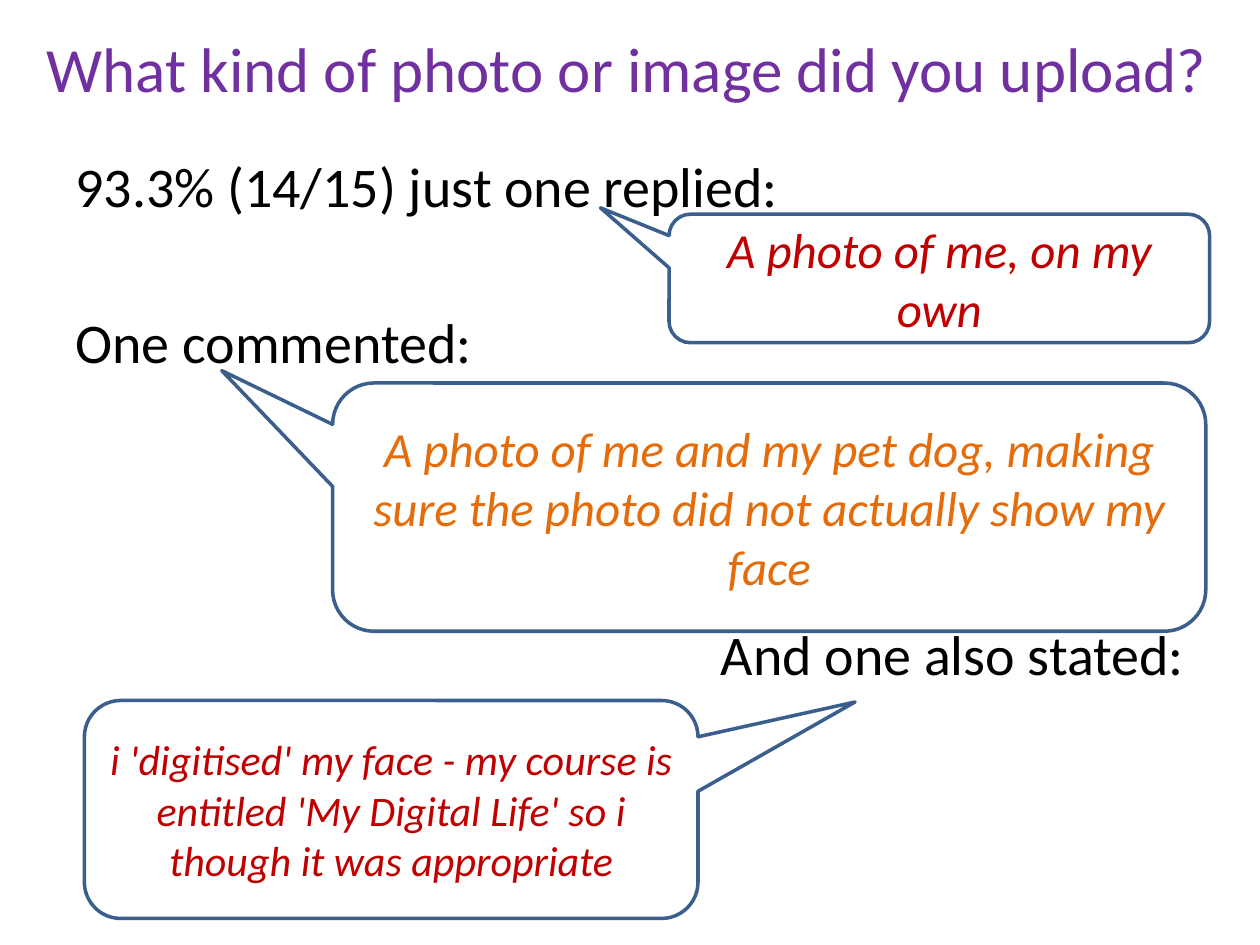
from dataclasses import dataclass

from pptx import Presentation
from pptx.dml.color import RGBColor
from pptx.enum.shapes import MSO_SHAPE
from pptx.enum.text import MSO_ANCHOR, MSO_AUTO_SIZE, PP_ALIGN
from pptx.util import Inches, Pt

CALLOUT = MSO_SHAPE.ROUNDED_RECTANGULAR_CALLOUT
LEFT, CENTER, RIGHT = PP_ALIGN.LEFT, PP_ALIGN.CENTER, PP_ALIGN.RIGHT
TOP, MIDDLE = MSO_ANCHOR.TOP, MSO_ANCHOR.MIDDLE
TITLE_ONLY = 5
WIDTH, HEIGHT = 10, 7.5


@dataclass(frozen=True)
class Theme:
    font: str = "Calibri"
    purple: str = "7030A0"
    black: str = "000000"
    red: str = "C00000"
    orange: str = "E46C0A"
    outline: str = "3A5F8C"
    title: int = 36
    body: int = 32
    quote: int = 28
    small_quote: int = 24
    line: int = 2
    corner: float = 0.167


THEME = Theme()


def box(left, top, width, height):
    """Turn inches into the four lengths of a shape."""
    return [Inches(v) for v in (left, top, width, height)]


def prepare(tf, anchor):
    tf.word_wrap = True
    tf.auto_size = MSO_AUTO_SIZE.NONE
    tf.vertical_anchor = anchor


def write(p, text, size=THEME.body, color=THEME.black, align=LEFT,
          italic=False, before=0):
    """Fill one paragraph with formatted text."""
    p.alignment = align
    p.space_before = Pt(before)
    r = p.add_run()
    r.text = text
    r.font.name = THEME.font
    r.font.size = Pt(size)
    r.font.italic = italic
    r.font.color.rgb = RGBColor.from_string(color)


def add_title(s, text):
    sp = s.shapes.title
    sp.left, sp.top, sp.width, sp.height = box(0.12, 0.03, 9.71, 1.01)
    prepare(sp.text_frame, MIDDLE)
    write(sp.text_frame.paragraphs[0], text, size=THEME.title,
          color=THEME.purple, align=CENTER)


def add_prompts(s, prompts):
    """Prompts share one text box; spacing leaves room for the quotes."""
    tf = s.shapes.add_textbox(*box(0.5, 1.15, 9, 5.55)).text_frame
    prepare(tf, TOP)
    for i, (text, align, before) in enumerate(prompts):
        p = tf.add_paragraph() if i else tf.paragraphs[0]
        write(p, text, align=align, before=before)


def add_callout(s, place, tail, text, size, color):
    """Speech bubble; tail is its tip as shares of the size from the centre."""
    sp = s.shapes.add_shape(CALLOUT, *box(*place))
    for i, value in enumerate((*tail, THEME.corner)):
        sp.adjustments[i] = value
    sp.shadow.inherit = False
    sp.fill.background()
    sp.line.color.rgb = RGBColor.from_string(THEME.outline)
    sp.line.width = Pt(THEME.line)
    prepare(sp.text_frame, MIDDLE)
    write(sp.text_frame.paragraphs[0], text, size=size, color=color,
          align=CENTER, italic=True)


def main():
    prs = Presentation()
    prs.slide_width, prs.slide_height = Inches(WIDTH), Inches(HEIGHT)
    s = prs.slides.add_slide(prs.slide_layouts[TITLE_ONLY])

    # Question and prompts
    add_title(s, "What kind of photo or image did you upload?")
    add_prompts(s, [
        ("93.3% (14/15) just one replied:", LEFT, 0),
        ("One commented:", LEFT, 51),
        ("And one also stated:", RIGHT, 140),
    ])

    # Quoted answers
    upper_left = (-0.627, -0.55)
    upper_right = (0.756, -0.493)
    add_callout(s, (0.67, 5.56, 4.87, 1.73), upper_right,
                "i 'digitised' my face - my course is entitled "
                "'My Digital Life' so i though it was appropriate",
                THEME.small_quote, THEME.red)
    add_callout(s, (2.64, 3.04, 6.93, 1.97), upper_left,
                "A photo of me and my pet dog, making sure the photo "
                "did not actually show my face",
                THEME.quote, THEME.orange)
    add_callout(s, (5.31, 1.7, 4.29, 1.02), upper_left,
                "A photo of me, on my own", THEME.quote, THEME.red)

    prs.save("out.pptx")


if __name__ == "__main__":
    main()
